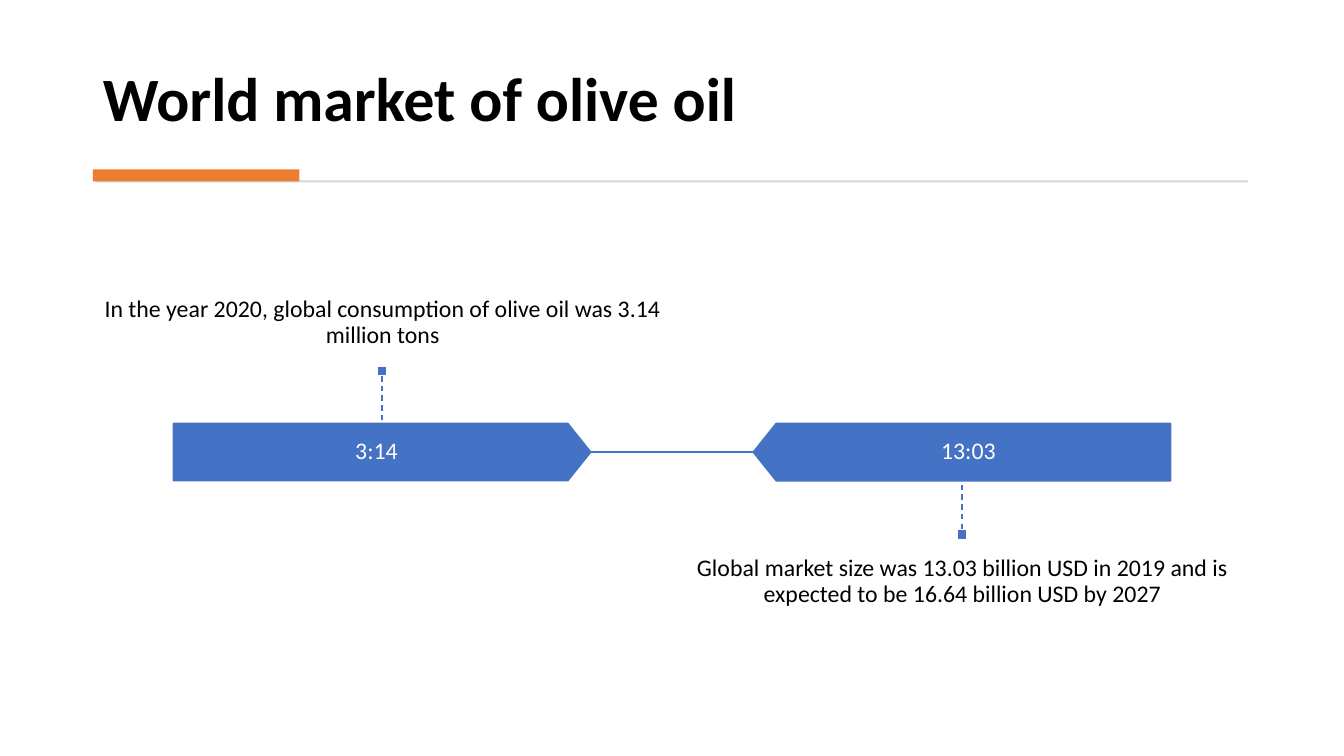
from dataclasses import dataclass

from lxml.etree import SubElement
from pptx import Presentation
from pptx.dml.color import RGBColor
from pptx.enum.dml import MSO_LINE
from pptx.enum.shapes import MSO_CONNECTOR, MSO_SHAPE
from pptx.enum.text import MSO_ANCHOR, MSO_AUTO_SIZE, PP_ALIGN
from pptx.oxml.ns import qn
from pptx.shapes.autoshape import Shape
from pptx.shapes.connector import Connector
from pptx.slide import Slide
from pptx.text.text import TextFrame
from pptx.util import Inches, Pt

BLACK = RGBColor(0x00, 0x00, 0x00)
WHITE = RGBColor(0xFF, 0xFF, 0xFF)
BLUE = RGBColor(0x44, 0x72, 0xC4)
ORANGE = RGBColor(0xED, 0x7D, 0x31)
GREY = RGBColor(0xD5, 0xD5, 0xD5)
FONT = "Calibri"

BAND_TOP, BAND_WIDTH, BAND_HEIGHT = 4.2, 4.14, 0.57
BAND_BOTTOM = BAND_TOP + BAND_HEIGHT
LABEL_WIDTH = 4.03
NOTE_WIDTH, NOTE_HEIGHT = 5.75, 1.52
MARKER = 0.1


@dataclass(frozen=True)
class Milestone:
    label: str
    note: str
    band_left: float
    label_left: float
    note_left: float
    note_top: float
    marker_top: float
    above: bool


MILESTONES = [
    Milestone("3:14",
              "In the year 2020, global consumption of olive oil was 3.14 million tons",
              1.72, 1.72, 0.92, 2.11, 3.63, True),
    Milestone("13:03",
              "Global market size was 13.03 billion USD in 2019 and is expected "
              "to be 16.64 billion USD by 2027",
              7.47, 7.59, 6.67, 5.35, 5.25, False),
]


def set_text(frame: TextFrame, text: str, size: float, color: RGBColor,
             align: PP_ALIGN, anchor: MSO_ANCHOR, bold: bool = False) -> None:
    frame.text = text
    frame.word_wrap = True
    frame.auto_size = MSO_AUTO_SIZE.NONE
    frame.vertical_anchor = anchor
    paragraph = frame.paragraphs[0]
    paragraph.alignment = align
    paragraph.line_spacing = 0.9
    font = paragraph.runs[0].font
    font.name, font.size, font.bold = FONT, Pt(size), bold
    font.color.rgb = color


def add_block(slide: Slide, kind: MSO_SHAPE, left: float, top: float, width: float,
              height: float, fill: RGBColor, outline: RGBColor | None = None) -> Shape:
    block = slide.shapes.add_shape(
        kind, Inches(left), Inches(top), Inches(width), Inches(height))
    block.shadow.inherit = False
    block.fill.solid()
    block.fill.fore_color.rgb = fill
    if outline is None:
        block.line.fill.background()
    else:
        block.line.color.rgb = outline
        block.line.width = Pt(1)
    return block


def add_caption(slide: Slide, text: str, left: float, top: float, width: float,
                height: float, color: RGBColor, anchor: MSO_ANCHOR,
                side_inset: float, end_inset: float) -> None:
    caption = slide.shapes.add_textbox(
        Inches(left), Inches(top), Inches(width), Inches(height))
    frame = caption.text_frame
    frame.margin_left = frame.margin_right = Inches(side_inset)
    frame.margin_top = frame.margin_bottom = Inches(end_inset)
    set_text(frame, text, 17, color, PP_ALIGN.CENTER, anchor)


def add_line(slide: Slide, x1: float, y1: float, x2: float, y2: float) -> Connector:
    line = slide.shapes.add_connector(
        MSO_CONNECTOR.STRAIGHT, Inches(x1), Inches(y1), Inches(x2), Inches(y2))
    line.line.color.rgb = BLUE
    line.line.width = Pt(1)
    SubElement(line._element.spPr, qn("a:effectLst"))
    return line


def add_milestone(slide: Slide, item: Milestone) -> None:
    # Arrow band and its label; the lower milestone points left
    band = add_block(slide, MSO_SHAPE.PENTAGON, item.band_left, BAND_TOP,
                     BAND_WIDTH, BAND_HEIGHT, BLUE, BLUE)
    band.adjustments[0] = 0.4
    band.rotation = 0 if item.above else 180
    add_caption(slide, item.label, item.label_left, BAND_TOP, LABEL_WIDTH, BAND_HEIGHT,
                WHITE, MSO_ANCHOR.MIDDLE, 0.14, 0.14)

    # Explanation
    add_caption(slide, item.note, item.note_left, item.note_top, NOTE_WIDTH, NOTE_HEIGHT,
                BLACK, MSO_ANCHOR.BOTTOM if item.above else MSO_ANCHOR.TOP, 0, 0.17)

    # Dashed stem ending in a square marker
    center = item.band_left + BAND_WIDTH / 2
    marker = add_block(slide, MSO_SHAPE.RECTANGLE, center - MARKER / 2, item.marker_top,
                       MARKER, MARKER, BLUE, WHITE)
    marker_end = item.marker_top + (MARKER if item.above else 0)
    band_edge = BAND_TOP if item.above else BAND_BOTTOM
    stem = add_line(slide, center, marker_end, center, band_edge)
    stem.line.dash_style = MSO_LINE.DASH
    stem.begin_connect(marker, 2 if item.above else 0)


def main() -> None:
    presentation = Presentation()
    presentation.slide_width = Inches(13.33)
    presentation.slide_height = Inches(7.5)
    slide = presentation.slides.add_slide(presentation.slide_layouts[5])

    # Title
    title = slide.shapes.title
    title.left, title.top = Inches(0.92), Inches(0.28)
    title.width, title.height = Inches(11.49), Inches(1.11)
    set_text(title.text_frame, "World market of olive oil", 44, BLACK,
             PP_ALIGN.LEFT, MSO_ANCHOR.BOTTOM, bold=True)

    # Rule with accent bar
    add_block(slide, MSO_SHAPE.RECTANGLE, 0.95, 1.79, 11.43, 0.02, GREY)
    add_block(slide, MSO_SHAPE.RECTANGLE, 0.92, 1.68, 2.05, 0.12, ORANGE)

    # Milestones and the line between their tips
    for item in MILESTONES:
        add_milestone(slide, item)
    first, second = MILESTONES
    middle = BAND_TOP + BAND_HEIGHT / 2
    add_line(slide, first.band_left + BAND_WIDTH, middle, second.band_left, middle)

    presentation.save("out.pptx")


if __name__ == "__main__":
    main()
